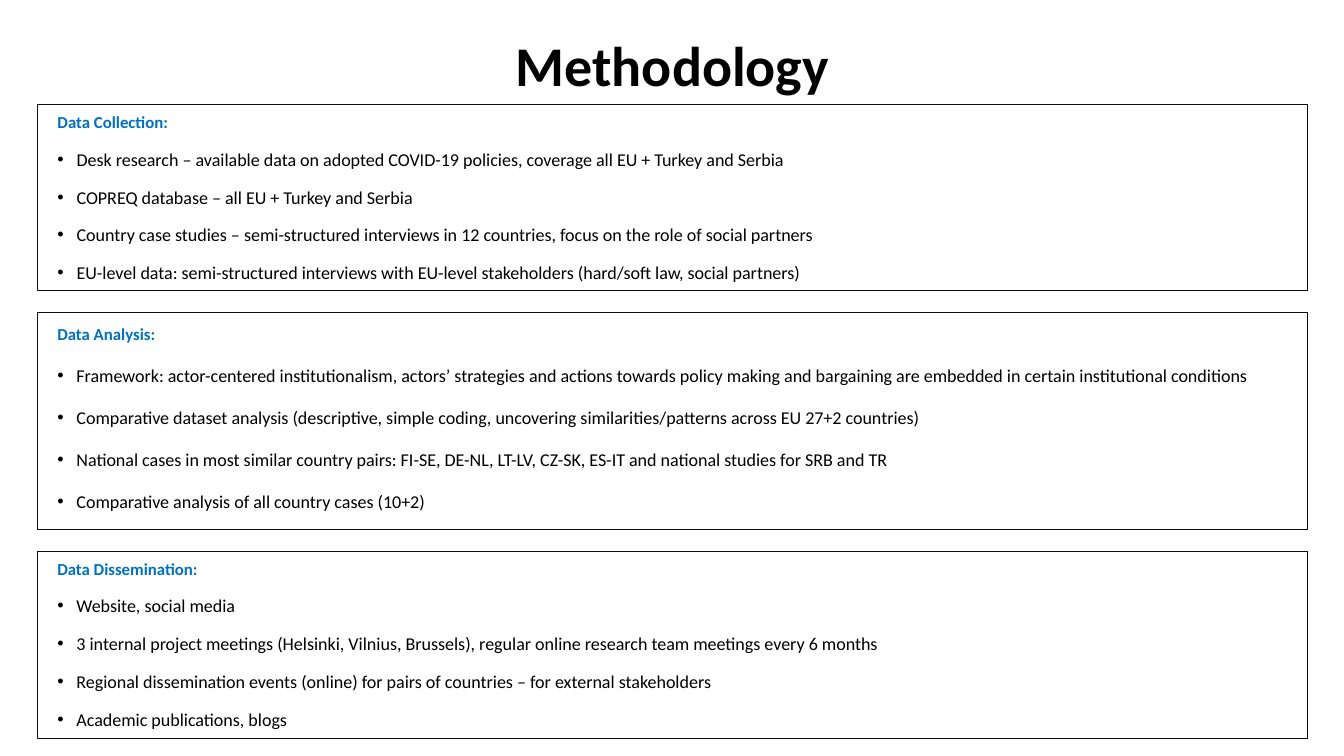
import pptx
import pptx.util
import pptx.dml.color
import pptx.enum.shapes
import pptx.enum.text
import pptx.oxml.ns
from lxml import etree

Inches, Pt = pptx.util.Inches, pptx.util.Pt
RGBColor = pptx.dml.color.RGBColor
PP_ALIGN = pptx.enum.text.PP_ALIGN
MSO_ANCHOR = pptx.enum.text.MSO_ANCHOR

# Content
TITLE = "Methodology"
# heading, top, height, line spacing, items
SECTIONS = [
    ("Data Collection:", 1.04, 1.84, 1.1, [
        "Desk research – available data on adopted COVID-19 policies, coverage all EU + Turkey and Serbia",
        "COPREQ database – all EU + Turkey and Serbia",
        "Country case studies – semi-structured interviews in 12 countries, focus on the role of social partners",
        "EU-level data: semi-structured interviews with EU-level stakeholders (hard/soft law, social partners)",
    ]),
    ("Data Analysis:", 3.1, 2.15, 1.3, [
        "Framework: actor-centered institutionalism, actors’ strategies and actions towards policy making "
        "and bargaining are embedded in certain institutional conditions",
        "Comparative dataset analysis (descriptive, simple coding, uncovering similarities/patterns "
        "across EU 27+2 countries)",
        "National cases in most similar country pairs: FI-SE, DE-NL, LT-LV, CZ-SK, ES-IT "
        "and national studies for SRB and TR",
        "Comparative analysis of all country cases (10+2)",
    ]),
    ("Data Dissemination:", 5.47, 1.86, 1.1, [
        "Website, social media",
        "3 internal project meetings (Helsinki, Vilnius, Brussels), regular online research team meetings "
        "every 6 months",
        "Regional dissemination events (online) for pairs of countries – for external stakeholders",
        "Academic publications, blogs",
    ]),
]

FONT = "Calibri"
BLACK = RGBColor(0x00, 0x00, 0x00)
BLUE = RGBColor(0x00, 0x70, 0xC0)
BORDER = RGBColor(0x0D, 0x0D, 0x0D)
LEFT, WIDTH = 0.37, 12.6


def place(sp, top, height):
    sp.left, sp.top = Inches(LEFT), Inches(top)
    sp.width, sp.height = Inches(WIDTH), Inches(height)
    tf = sp.text_frame
    tf.word_wrap = True
    tf.auto_size = pptx.enum.text.MSO_AUTO_SIZE.NONE
    tf.vertical_anchor = MSO_ANCHOR.TOP
    return tf


def add_run(p, text, size, color, bold):
    r = p.add_run()
    r.text = text
    r.font.name, r.font.size = FONT, Pt(size)
    r.font.bold, r.font.color.rgb = bold, color


def set_bullet(p, indent, hanging, char=None):
    pPr = p._p.get_or_add_pPr()
    pPr.set("marL", str(Inches(indent)))
    pPr.set("indent", str(Inches(-hanging)))
    qn = pptx.oxml.ns.qn
    if char:
        etree.SubElement(pPr, qn("a:buFont"), typeface="Arial")
        etree.SubElement(pPr, qn("a:buChar"), char=char)
    else:
        etree.SubElement(pPr, qn("a:buNone"))


def fill_section(sp, heading, top, height, spacing, items):
    sp.fill.background()
    sp.line.color.rgb = BORDER
    sp.line.width = Pt(0.75)
    tf = place(sp, top, height)
    for i, text in enumerate([heading] + items):
        p = tf.paragraphs[0] if i == 0 else tf.add_paragraph()
        p.alignment = PP_ALIGN.LEFT
        p.line_spacing = spacing
        p.space_before, p.space_after = Pt(10), Pt(0)
        if i == 0:
            set_bullet(p, 0.1, 0)
            add_run(p, text, 12, BLUE, True)
        else:
            set_bullet(p, 0.29, 0.19, "•")
            add_run(p, text, 12.9, BLACK, False)


prs = pptx.Presentation()
prs.slide_width, prs.slide_height = Inches(13.33), Inches(7.5)
slide = prs.slides.add_slide(prs.slide_layouts[1])

# Title
tf = place(slide.shapes.title, 0.33, 0.96)
p = tf.paragraphs[0]
p.alignment = PP_ALIGN.CENTER
p.line_spacing = 0.9
add_run(p, TITLE, 40, BLACK, True)

# Framed sections: the first in the body placeholder, the others in rectangles
for i, section in enumerate(SECTIONS):
    if i == 0:
        sp = slide.placeholders[1]
    else:
        sp = slide.shapes.add_shape(pptx.enum.shapes.MSO_SHAPE.RECTANGLE, 0, 0, 0, 0)
        sp.shadow.inherit = False
    fill_section(sp, *section)

prs.save("out.pptx")
